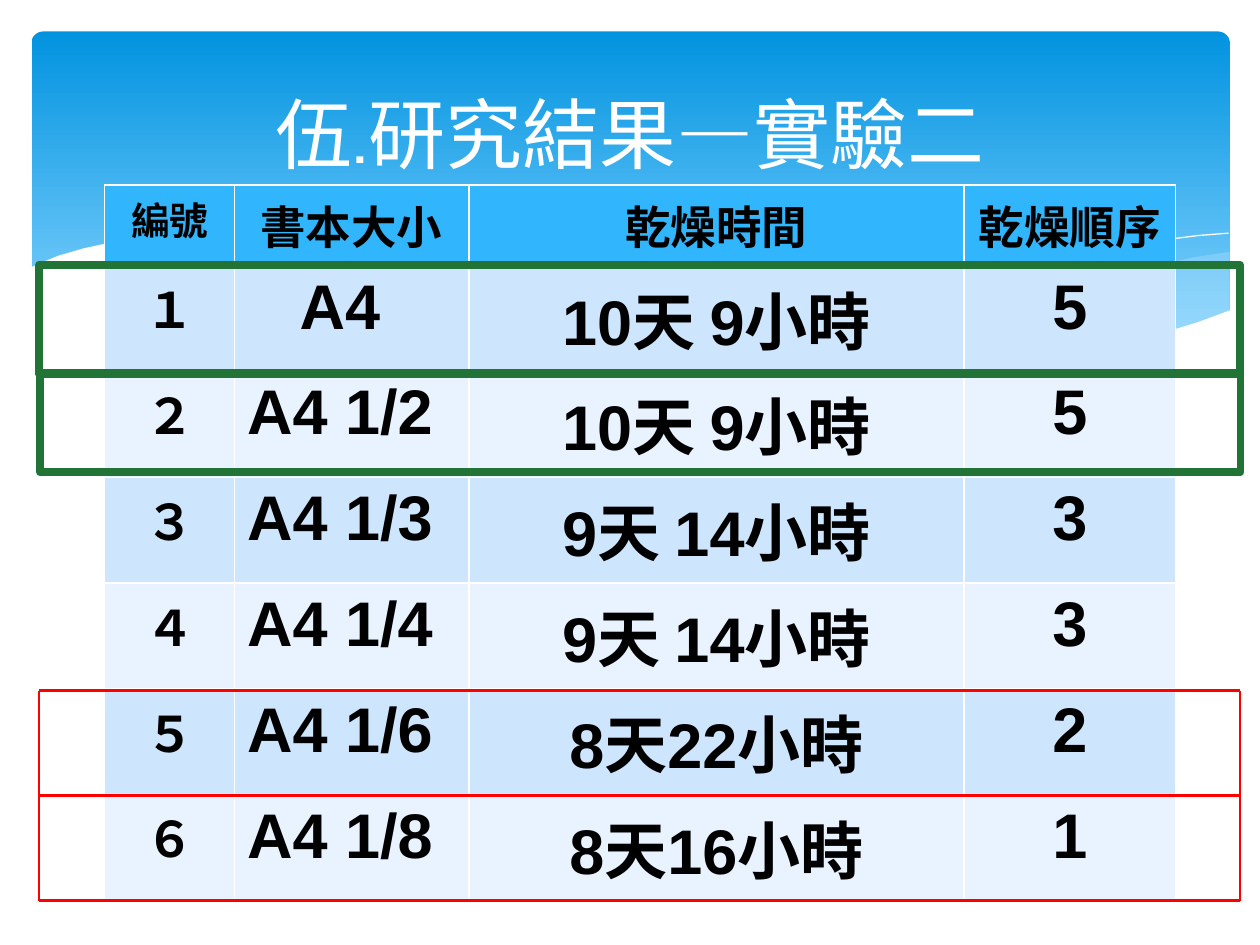
import pptx
import pptx.dml.color
import pptx.enum.shapes
import pptx.enum.text
import pptx.oxml
import pptx.oxml.ns
import pptx.util
from lxml import etree

Pt = pptx.util.Pt
ALIGN = pptx.enum.text.PP_ALIGN
SHAPE = pptx.enum.shapes.MSO_SHAPE

COLORS = {
    "sky_top": "0293E0", "sky_bottom": "83D3FE", "wave": "C6E7FC",
    "white": "FFFFFF", "text": "000000", "header": "31B6FD",
    "band_odd": "CEE5FE", "band_even": "E8F3FF",
    "green": "217436", "red": "FF0000",
}

# Wave outlines, in points on the page
RIGHT_WAVE = [
    (702, 144), (682.6, 147), (663, 151.2), (641.5, 156.2), (619.9, 160.6),
    (579.6, 170.6), (542.2, 178.6), (508.3, 185), (475.9, 190.8), (507.6, 195.1),
    (536.4, 198), (570.2, 199.4), (601.2, 199.4), (627.8, 197.3), (651.6, 193.7),
    (673.2, 188.6), (693.4, 181.4), (702.7, 177.8), (702.7, 144)]
MIDDLE_WAVE = [
    (643, 196.6), (602.6, 190.8), (558, 182.9), (508.3, 172.8), (452.9, 159.8),
    (409.7, 149.8), (370.1, 142.6), (334.8, 137.5), (302.4, 134.6), (273.6, 133.2),
    (247.7, 133.9), (215.3, 136.1), (205.9, 137.5), (246.2, 143.3), (291, 151.9),
    (323.3, 159.8), (381.6, 172.8), (432.7, 183.6), (478.8, 191.5), (519.8, 197.3),
    (556.6, 199.4), (589, 200.2), (617.8, 199.4)]
LONG_CURVE = [
    (222.5, 140.4), (241.2, 137.5), (269.3, 135.4), (299.5, 134.6), (337.7, 136.1),
    (383.8, 139.7), (437.8, 146.9), (500.4, 157.7), (572.4, 173.5), (653, 195.8)]
SHORT_CURVE = [
    (441.4, 185), (483.8, 173.5), (538.6, 160.6), (601.9, 146.9), (644.4, 139.7),
    (684.7, 134.6), (702, 133.2)]
WHITE_WAVE = [
    (703.4, 177.1), (684, 184.3), (662.4, 190.8), (639, 195.8), (612, 198),
    (582.5, 199.4), (548, 198), (509.8, 194.4), (466.6, 188.6), (416.9, 180),
    (362.2, 167.8), (321.8, 158.4), (281.5, 149), (244.8, 141.8), (210.2, 136.8),
    (180, 133.9), (151.9, 132.5), (127.4, 132.5), (105.1, 133.2), (85.7, 134.6),
    (68.4, 137.5), (48.2, 141.8), (33.1, 146.2), (20.9, 151.2), (16.6, 153.4),
    (16.6, 236.9), (703.4, 236.9)]

HEADERS = ["編號", "書本大小", "乾燥時間", "乾燥順序"]
RESULTS = [
    ("１", "A4", "10天 9小時", "5"),
    ("２", "A4 1/2", "10天 9小時", "5"),
    ("３", "A4 1/3", "9天 14小時", "3"),
    ("４", "A4 1/4", "9天 14小時", "3"),
    ("５", "A4 1/6", "8天22小時", "2"),
    ("６", "A4 1/8", "8天16小時", "1"),
]


def rgb(name):
    return pptx.dml.color.RGBColor.from_string(COLORS[name])


def apply_format(target, values):
    for name, value in values.items():
        setattr(target, name, value)


def format_text(para, size, font, color, bold=False, align=ALIGN.CENTER):
    para.alignment = align
    for span in para.runs:
        apply_format(span.font, {"size": Pt(size), "name": font, "bold": bold})
        span.font.color.rgb = rgb(color)


def add_outline(page, points, fill=None, alpha=100, closed=True):
    corners = [(Pt(x), Pt(y)) for x, y in points]
    builder = page.shapes.build_freeform(*corners[0])
    builder.add_line_segments(corners[1:], close=closed)
    shape = builder.convert_to_shape()
    shape.shadow.inherit = False
    if fill is None:
        shape.fill.background()
        shape.line.color.rgb = rgb("white")
        shape.line.width = Pt(0)
        return
    shape.fill.solid()
    shape.fill.fore_color.rgb = rgb(fill)
    shape.line.fill.background()
    if alpha < 100:
        color = shape._element.spPr.find(".//" + pptx.oxml.ns.qn("a:srgbClr"))
        etree.SubElement(color, pptx.oxml.ns.qn("a:alpha"), val=str(alpha * 1000))


def add_backdrop(page, box):
    # Blue gradient panel
    panel = page.shapes.add_shape(SHAPE.ROUNDED_RECTANGLE, *map(Pt, box))
    panel.adjustments[0] = 0.034
    panel.shadow.inherit = False
    panel.line.fill.background()
    panel.fill.gradient()
    panel.fill.gradient_angle = 270
    for stop, place, color in zip(panel.fill.gradient_stops, (0, 0.9),
                                  ("sky_top", "sky_bottom")):
        stop.position = place
        stop.color.rgb = rgb(color)
    # Waves
    add_outline(page, RIGHT_WAVE, "wave", 29)
    add_outline(page, MIDDLE_WAVE, "wave", 40)
    add_outline(page, LONG_CURVE, closed=False)
    add_outline(page, SHORT_CURVE, closed=False)
    add_outline(page, WHITE_WAVE, "white")


def style_cell(cell, fill, bottom=1):
    properties = cell._tc.get_or_add_tcPr()
    for side, width in (("L", 1), ("R", 1), ("T", 1), ("B", bottom)):
        properties.append(pptx.oxml.parse_xml(
            f'<a:ln{side} {pptx.oxml.ns.nsdecls("a")} w="{Pt(width)}"><a:solidFill>'
            f'<a:srgbClr val="{COLORS["white"]}"/></a:solidFill></a:ln{side}>'))
    cell.fill.solid()
    cell.fill.fore_color.rgb = rgb(fill)


def add_results_table(page, box):
    table = page.shapes.add_table(len(RESULTS) + 1, len(HEADERS), *map(Pt, box)).table
    header_height = 46.1
    row_height = (box[3] - header_height) / len(RESULTS)
    for column, width in zip(table.columns, (74.2, 133.9, 283, 120.9)):
        column.width = Pt(width)
    for number, texts in enumerate([HEADERS] + RESULTS):
        header = number == 0
        table.rows[number].height = Pt(header_height if header else row_height)
        fill = "header" if header else "band_odd" if number % 2 else "band_even"
        sizes = (22, 26, 26, 26) if header else (28, 36, 36, 36)
        for index, (text, size) in enumerate(zip(texts, sizes)):
            cell = table.cell(number, index)
            style_cell(cell, fill, 3 if header else 1)
            cell.text = text
            left = index == 1 and not header
            format_text(cell.text_frame.paragraphs[0], size,
                        "Cabin" if header else "Arial", "text", True,
                        ALIGN.LEFT if left else ALIGN.CENTER)
    table.cell(1, 1).margin_left = Pt(37.2)


def place_title(page, box, text):
    title = page.shapes.title
    apply_format(title, dict(zip(("left", "top", "width", "height"), map(Pt, box))))
    title.text_frame.text = text
    apply_format(title.text_frame, {
        "word_wrap": True, "vertical_anchor": pptx.enum.text.MSO_ANCHOR.MIDDLE})
    format_text(title.text_frame.paragraphs[0], 44, "Cabin", "white")
    page.shapes._spTree.append(title._element)  # above the backdrop


def add_green_frame(page, box):
    frame = page.shapes.add_shape(SHAPE.RECTANGLE, *map(Pt, box))
    frame.shadow.inherit = False
    frame.fill.background()
    frame.line.color.rgb = rgb("green")
    frame.line.width = Pt(4.5)


def add_red_grid(page, box, rows=2):
    left, top, width, height = box
    right = left + width
    levels = [top + height * step / rows for step in range(rows + 1)]
    lines = [(left, y, right, y) for y in levels]
    lines += [(x, upper, x, lower) for x in (left, right)
              for upper, lower in zip(levels, levels[1:])]
    for ends in lines:
        line = page.shapes.add_connector(
            pptx.enum.shapes.MSO_CONNECTOR.STRAIGHT, *map(Pt, ends))
        line.line.color.rgb = rgb("red")
        line.line.width = Pt(1.25)
        etree.SubElement(line._element.spPr, pptx.oxml.ns.qn("a:effectLst"))


def main():
    deck = pptx.Presentation()
    apply_format(deck, {"slide_width": Pt(720), "slide_height": Pt(540)})
    page = deck.slides.add_slide(deck.slide_layouts[5])
    add_backdrop(page, (18, 18, 684.7, 194.4))
    add_results_table(page, (59.8, 105.8, 612, 409))
    place_title(page, (36, 26.6, 648, 98.6), "伍.研究結果—實驗二")
    # Highlights around equal and fastest results
    add_green_frame(page, (22.5, 151.2, 686, 62.4))
    add_green_frame(page, (22.9, 213.1, 686, 56.7))
    add_red_grid(page, (22.5, 394.6, 686, 120))
    deck.save("out.pptx")


if __name__ == "__main__":
    main()
